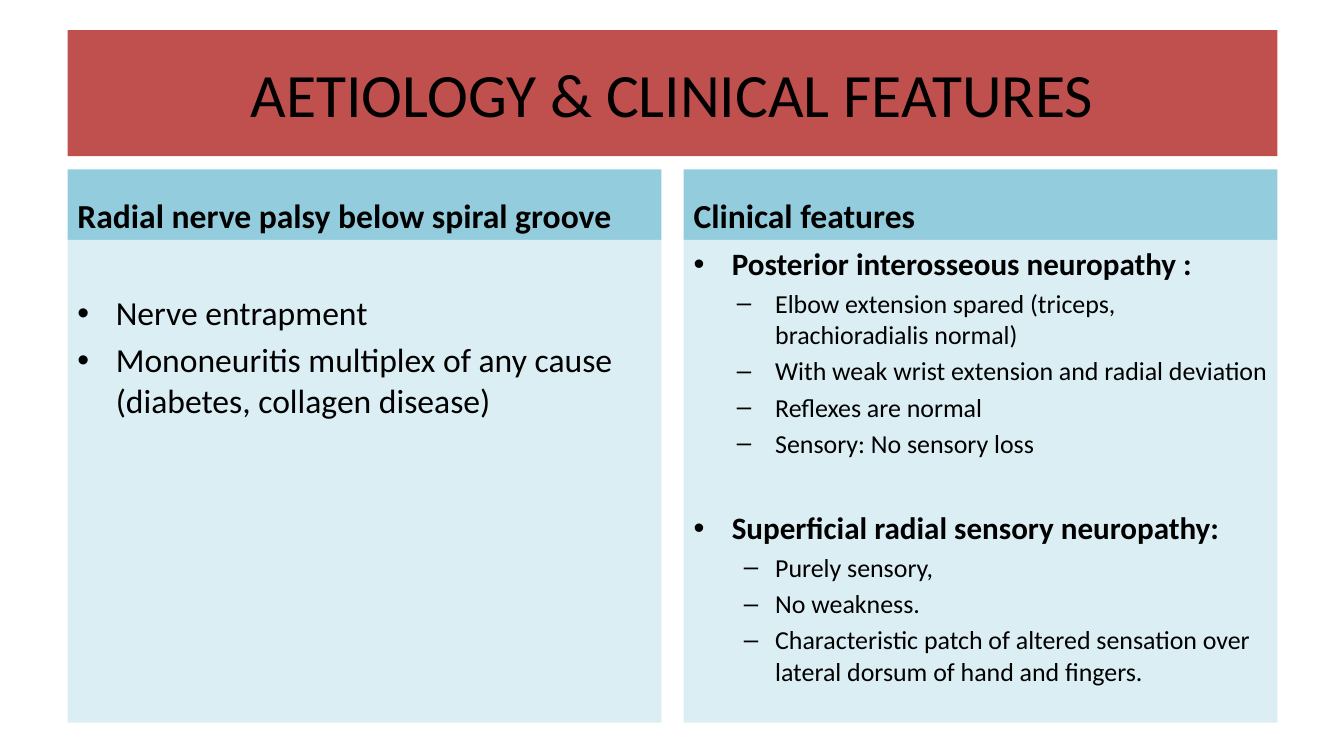
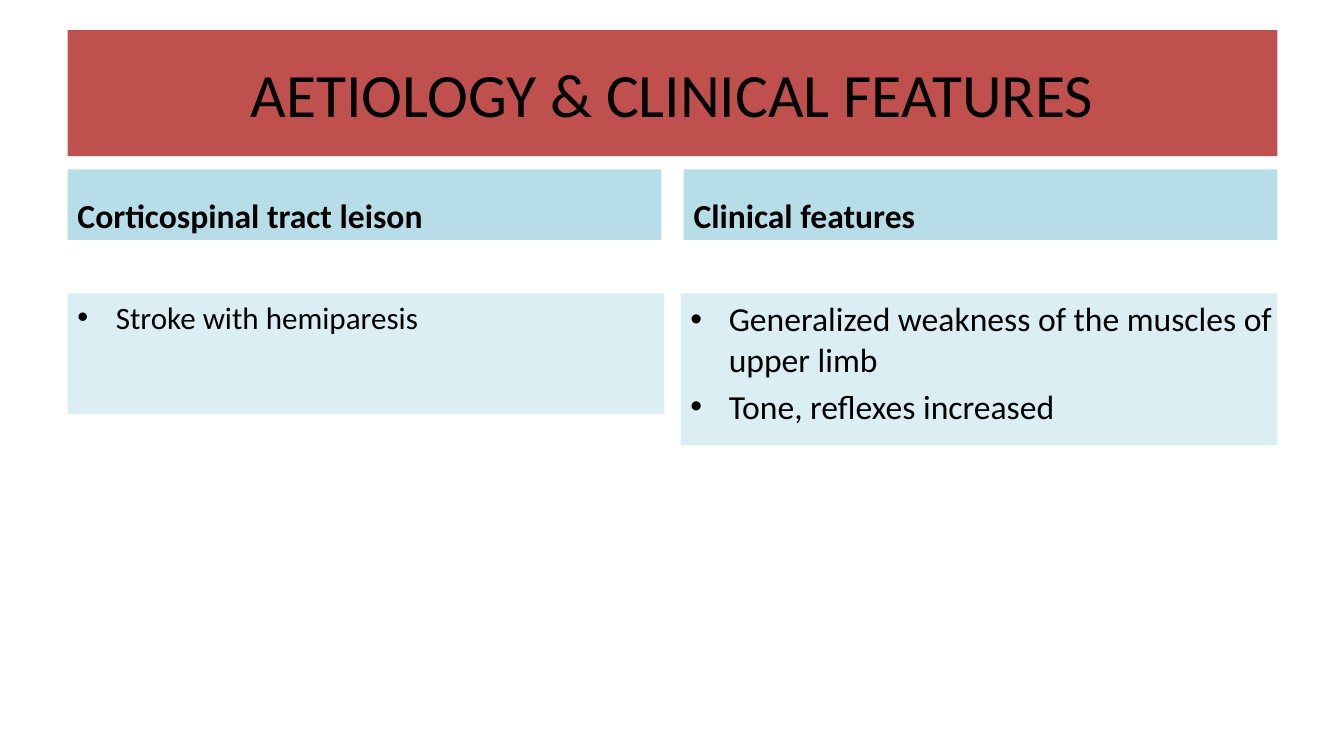
"""Build two slides on the causes and clinical features of wrist drop."""

from lxml.etree import SubElement
from pptx import Presentation
from pptx.dml.color import RGBColor
from pptx.enum.shapes import MSO_SHAPE
from pptx.enum.text import MSO_ANCHOR, PP_ALIGN
from pptx.oxml.ns import qn
from pptx.util import Inches, Pt

COLORS = {
    "title": "C0504D",
    "strong": "93CDDD",
    "medium": "B7DEE8",
    "light": "DBEEF4",
    "text": "000000",
}
FONT = "Calibri"
TITLE = "AETIOLOGY & CLINICAL FEATURES"

WIDTH, HEIGHT = 13.33, 7.5
MARGIN = 0.67
CONTENT_WIDTH = 12
TITLE_TOP, TITLE_HEIGHT = 0.3, 1.25
HEADING_TOP, HEADING_HEIGHT, HEADING_WIDTH = 1.68, 0.7, 5.89
PADDING = 0.05

LEVELS = {
    "plain": {"size": 24, "bullet": "•", "left": 0.38, "hang": 0.38},
    "small": {"size": 22.2, "bullet": "•", "left": 0.38, "hang": 0.38},
    "group": {"size": 22.2, "bullet": "•", "left": 0.38, "hang": 0.38, "bold": True},
    "wide": {"size": 18.5, "bullet": "–", "left": 0.81, "hang": 0.38},
    "narrow": {"size": 18.5, "bullet": "–", "left": 0.81, "hang": 0.31},
}
GROUP_GAP = 36

SLIDES = [
    {
        "heading_color": "strong",
        "body_top": 2.38,
        "body_width": 5.89,
        "columns": [
            {
                "heading": "Radial nerve palsy below spiral groove",
                "height": 4.79,
                "lead": 0.47,
                "items": [
                    ("plain", "Nerve entrapment"),
                    ("plain", "Mononeuritis multiplex of any cause (diabetes, collagen disease)"),
                ],
            },
            {
                "heading": "Clinical features",
                "height": 4.79,
                "items": [
                    ("group", "Posterior interosseous neuropathy :"),
                    ("wide", "Elbow extension spared (triceps, brachioradialis normal)"),
                    ("wide", "With weak wrist extension and radial deviation"),
                    ("wide", "Reflexes are normal"),
                    ("wide", "Sensory: No sensory loss"),
                    ("group", "Superficial radial sensory neuropathy:"),
                    ("narrow", "Purely sensory,"),
                    ("narrow", "No weakness."),
                    ("narrow", "Characteristic patch of altered sensation over "
                               "lateral dorsum of hand and fingers."),
                ],
            },
        ],
    },
    {
        "heading_color": "medium",
        "body_top": 2.91,
        "body_width": 5.92,
        "columns": [
            {
                "heading": "Corticospinal tract leison",
                "height": 1.2,
                "items": [("small", "Stroke with hemiparesis")],
            },
            {
                "heading": "Clinical features",
                "height": 1.51,
                "items": [
                    ("plain", "Generalized weakness of the muscles of upper limb"),
                    ("plain", "Tone, reflexes increased"),
                ],
            },
        ],
    },
]


def add_panel(slide, left, top, width, height, color, anchor):
    """Add a filled rectangle and return its text frame."""
    shape = slide.shapes.add_shape(
        MSO_SHAPE.RECTANGLE, Inches(left), Inches(top), Inches(width), Inches(height)
    )
    shape.shadow.inherit = False
    shape.fill.solid()
    shape.fill.fore_color.rgb = RGBColor.from_string(COLORS[color])
    shape.line.fill.background()
    text_frame = shape.text_frame
    text_frame.word_wrap = True
    text_frame.vertical_anchor = anchor
    return text_frame


def write(paragraph, text, size, bold=False, align=PP_ALIGN.LEFT):
    """Fill a paragraph with text in the shared font."""
    paragraph.text = text
    paragraph.alignment = align
    font = paragraph.runs[0].font
    font.name = FONT
    font.size = Pt(size)
    font.bold = bold
    font.color.rgb = RGBColor.from_string(COLORS["text"])


def set_bullet(paragraph, level):
    """Give a paragraph its bullet character and hanging indent."""
    properties = paragraph._p.get_or_add_pPr()
    properties.set("marL", str(Inches(level["left"])))
    properties.set("indent", str(-Inches(level["hang"])))
    SubElement(properties, qn("a:buFont"), typeface="Arial")
    SubElement(properties, qn("a:buChar"), char=level["bullet"])


def add_list(text_frame, items):
    """Write bulleted items, with a wider gap before each later group."""
    for index, (name, text) in enumerate(items):
        level = LEVELS[name]
        paragraph = text_frame.add_paragraph() if index else text_frame.paragraphs[0]
        write(paragraph, text, level["size"], level.get("bold", False))
        if index:
            paragraph.space_before = Pt(GROUP_GAP if name == "group" else level["size"] / 5)
        set_bullet(paragraph, level)


def column_left(index, width):
    """Return the left edge of a column flush with its outer margin."""
    return MARGIN + index * (CONTENT_WIDTH - width)


def add_slide(presentation, content):
    """Add one slide with the title band and its two columns."""
    slide = presentation.slides.add_slide(presentation.slide_layouts[6])
    title = add_panel(slide, MARGIN, TITLE_TOP, CONTENT_WIDTH, TITLE_HEIGHT,
                      "title", MSO_ANCHOR.MIDDLE)
    write(title.paragraphs[0], TITLE, 44, align=PP_ALIGN.CENTER)
    for index, column in enumerate(content["columns"]):
        heading = add_panel(slide, column_left(index, HEADING_WIDTH), HEADING_TOP,
                            HEADING_WIDTH, HEADING_HEIGHT,
                            content["heading_color"], MSO_ANCHOR.BOTTOM)
        write(heading.paragraphs[0], column["heading"], 24, bold=True)
        width = content["body_width"]
        body = add_panel(slide, column_left(index, width), content["body_top"],
                         width, column["height"], "light", MSO_ANCHOR.TOP)
        body.margin_top = Inches(PADDING + column.get("lead", 0))
        body.margin_right = Inches(PADDING)
        add_list(body, column["items"])


def main():
    """Build and save the presentation."""
    presentation = Presentation()
    presentation.slide_width = Inches(WIDTH)
    presentation.slide_height = Inches(HEIGHT)
    for content in SLIDES:
        add_slide(presentation, content)
    presentation.save("out.pptx")


if __name__ == "__main__":
    main()
